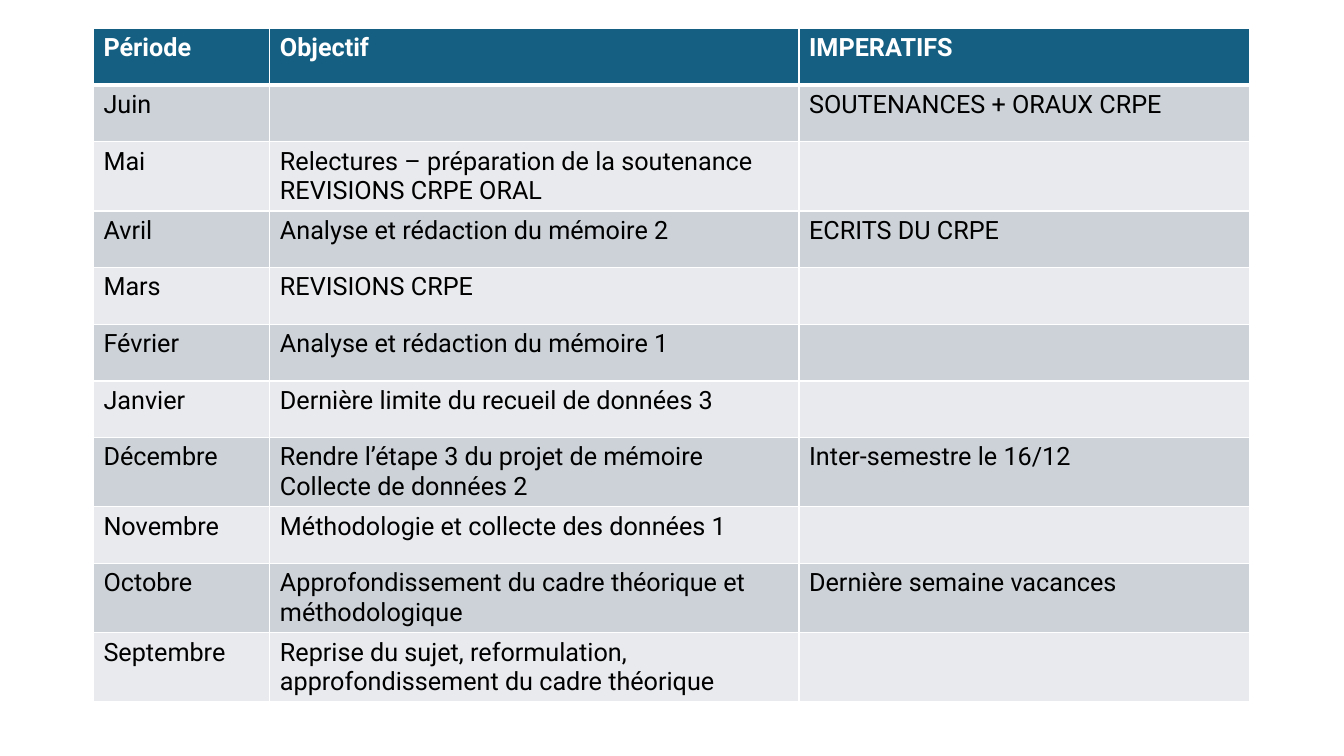
"""Build a slide with the yearly plan for a thesis."""
import pptx
import pptx.dml.color
import pptx.oxml
import pptx.oxml.ns
import pptx.util

PX = 9525
HUES = {"head": "156082", "dark": "CCD2D8", "light": "E8EAED",
        "white": "FFFFFF", "black": "000000"}
COLS = [168, 504, 429]
ROW = 54
PLAN = [
    ("Période", "Objectif", "IMPERATIFS"),
    ("Juin", "", "SOUTENANCES + ORAUX CRPE"),
    ("Mai", "Relectures – préparation de la soutenance\nREVISIONS CRPE ORAL", ""),
    ("Avril", "Analyse et rédaction du mémoire 2", "ECRITS DU CRPE"),
    ("Mars", "REVISIONS CRPE", ""),
    ("Février", "Analyse et rédaction du mémoire 1", ""),
    ("Janvier", "Dernière limite du recueil de données 3", ""),
    ("Décembre", "Rendre l’étape 3 du projet de mémoire\nCollecte de données 2",
     "Inter-semestre le 16/12"),
    ("Novembre", "Méthodologie et collecte des données 1", ""),
    ("Octobre", "Approfondissement du cadre théorique et méthodologique",
     "Dernière semaine vacances"),
    ("Septembre",
     "Reprise du sujet, reformulation, approfondissement du cadre théorique", ""),
]


def px(count):
    """Turn px into EMU."""
    return pptx.util.Emu(count * PX)


def tint(name):
    """Return a named colour."""
    return pptx.dml.color.RGBColor.from_string(HUES[name])


def write(frame, text, size=18, face="Roboto", hue="black", bold=False):
    """Put text in a frame, one paragraph a line."""
    frame.text = text
    for para in frame.paragraphs:
        for item in [para.font] + [run.font for run in para.runs]:
            item.size = pptx.util.Pt(size)
            item.name = face
            item.bold = bold
            item.color.rgb = tint(hue)


def edge(cell, side, width):
    """Draw one white cell border."""
    space = pptx.oxml.ns.nsdecls("a")
    line = pptx.oxml.parse_xml(
        f'<a:ln{side} {space} w="{pptx.util.Pt(width)}"><a:solidFill>'
        f'<a:srgbClr val="{HUES["white"]}"/></a:solidFill></a:ln{side}>')
    cell._tc.get_or_add_tcPr().append(line)


def style(cell, row):
    """Set the borders and fill that go with a row."""
    thick = {(0, "B"), (1, "T")}
    for side in "LRTB":
        edge(cell, side, 3 if (row, side) in thick else 1)
    cell.fill.solid()
    band = "dark" if row % 2 else "light"
    cell.fill.fore_color.rgb = tint(band if row else "head")


def grid(slide, left, top):
    """Add the plan as a table."""
    frame = slide.shapes.add_table(len(PLAN), len(COLS), px(left), px(top),
                                   px(sum(COLS)), px(ROW * len(PLAN)))
    table = frame.table
    for col, width in zip(table.columns, COLS):
        col.width = px(width)
    for row, texts in enumerate(PLAN):
        table.rows[row].height = px(ROW)
        for col, text in enumerate(texts):
            cell = table.cell(row, col)
            style(cell, row)
            write(cell.text_frame, text, bold=row == 0,
                  hue="black" if row else "white")


def main():
    """Make and save the deck."""
    deck = pptx.Presentation()
    deck.slide_width, deck.slide_height = px(1280), px(720)
    slide = deck.slides.add_slide(deck.slide_layouts[6])
    grid(slide, 89, 27)
    deck.save("out.pptx")


if __name__ == "__main__":
    main()
